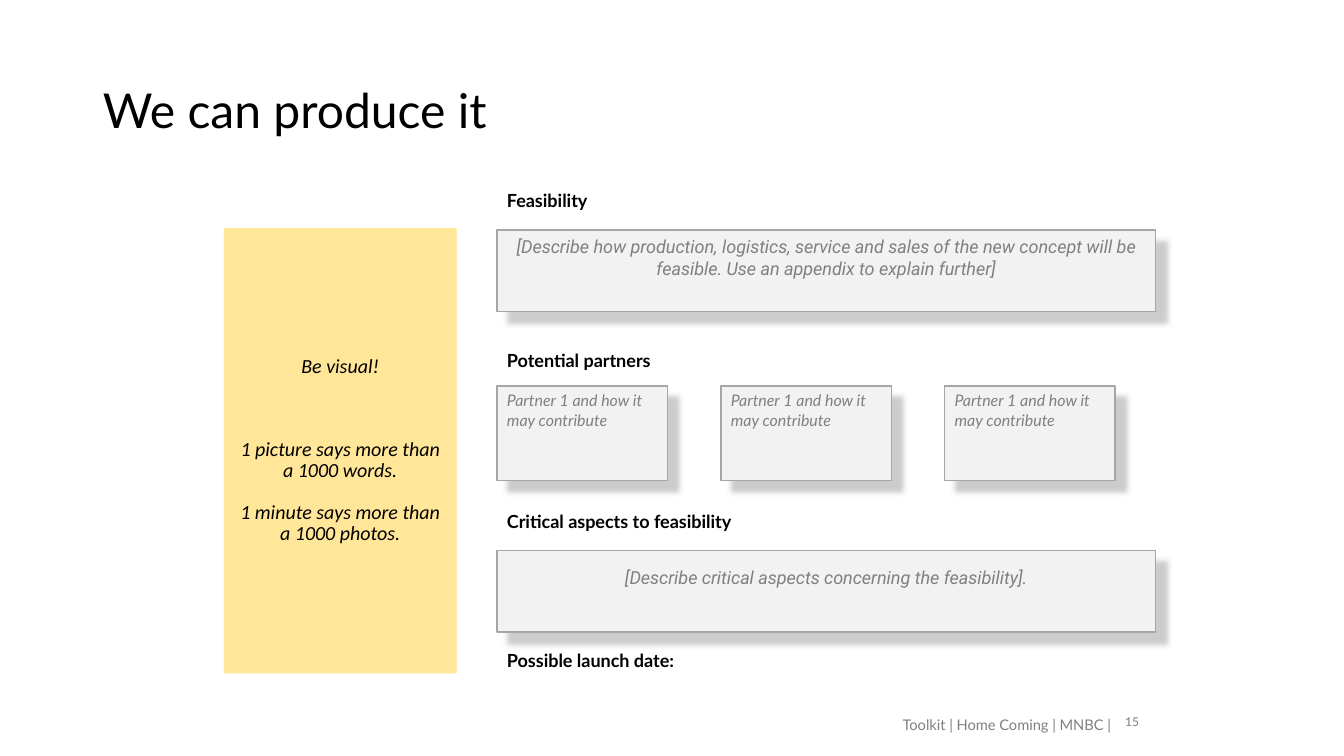
from lxml import etree
from pptx import Presentation
from pptx import util as u
from pptx.dml.color import RGBColor
from pptx.enum import shapes, text
from pptx.oxml import ns

GREY, BLACK = "808080", "000000"
COLUMN_LEFT, COLUMN_WIDTH = 4.93, 6.53
LEFT, CENTER, RIGHT = text.PP_ALIGN.LEFT, text.PP_ALIGN.CENTER, text.PP_ALIGN.RIGHT
TOP, MIDDLE = text.MSO_ANCHOR.TOP, text.MSO_ANCHOR.MIDDLE


def color(value):
    return RGBColor.from_string(value)


def inches(box):
    return [u.Inches(length) for length in box]


def write(shape, *lines, size=12.9, font="Lato", fill=BLACK, bold=False, italic=False,
          align=LEFT, anchor=TOP, spacing=None, gaps=(), bottom=0.05, wrap=True):
    """Write one paragraph per line; gaps are the points between paragraphs."""
    frame = shape.text_frame
    frame.auto_size = text.MSO_AUTO_SIZE.NONE
    frame.word_wrap = wrap
    frame.vertical_anchor = anchor
    frame.margin_bottom = u.Inches(bottom)
    for index, line in enumerate(lines):
        paragraph = frame.add_paragraph() if index else frame.paragraphs[0]
        paragraph.text = line
        paragraph.alignment = align
        if spacing:
            paragraph.line_spacing = spacing
        if index and gaps:
            paragraph.space_before = u.Pt(gaps[index - 1])
        paragraph.font.size = u.Pt(size)
        paragraph.font.name = font
        paragraph.font.bold = bold
        paragraph.font.italic = italic
        paragraph.font.color.rgb = color(fill)


def add_text(slide, box, *lines, **style):
    write(slide.shapes.add_textbox(*inches(box)), *lines, **style)


def add_rectangle(slide, box, fill):
    shape = slide.shapes.add_shape(shapes.MSO_SHAPE.RECTANGLE, *inches(box))
    shape.shadow.inherit = False
    shape.fill.solid()
    shape.fill.fore_color.rgb = color(fill)
    shape.line.fill.background()
    return shape


def add_card(slide, box):
    """Add a light grey rectangle with a soft shadow to the lower right."""
    card = add_rectangle(slide, box, "F2F2F2")
    card.line.color.rgb = color("A6A6A6")
    card.line.width = u.Pt(1)
    effects = card._element.spPr.find(ns.qn("a:effectLst"))
    shadow = etree.SubElement(effects, ns.qn("a:outerShdw"), blurRad=str(u.Pt(4)),
                              dist=str(u.Pt(11)), dir=str(45 * 60000),
                              algn="tl", rotWithShape="0")
    shade = etree.SubElement(shadow, ns.qn("a:srgbClr"), val=GREY)
    etree.SubElement(shade, ns.qn("a:alpha"), val="40000")
    return card


def add_title(slide, box, title):
    placeholder = slide.shapes.title
    placeholder.left, placeholder.top, placeholder.width, placeholder.height = inches(box)
    write(placeholder, title, size=34.3, anchor=MIDDLE, spacing=0.9)


def add_heading(slide, top, heading):
    add_text(slide, (COLUMN_LEFT, top, 4.03, 0.32), heading, bold=True)


def add_description(slide, box, heading, description):
    left, top, width, height = box
    add_heading(slide, top - 0.45, heading)
    card = add_card(slide, (left, top, width, height))
    write(card, description, font="Roboto", fill=GREY, italic=True,
          align=CENTER, anchor=MIDDLE, bottom=0.32)


def add_partners(slide, box, heading, partners):
    left, top, width, height = box
    add_heading(slide, top - 0.41, heading)
    card_width = 1.69
    step = (width - card_width) / (len(partners) - 1)
    for index, partner in enumerate(partners):
        card = add_card(slide, (left + index * step, top, card_width, height))
        write(card, partner, size=11.4, fill=GREY, italic=True)


def add_sidebar(slide, box):
    write(add_rectangle(slide, box, "FFE699"),
          "Be visual!",
          "1 picture says more than a 1000 words.",
          "1 minute says more than a 1000 photos.",
          size=14.3, font="Calibri", italic=True, align=CENTER, anchor=MIDDLE,
          spacing=0.9, gaps=(43.7, 14))


def add_footer(slide, box):
    left, top, width, height = box
    add_text(slide, (left, top + 0.02, 2.35, 0.28), "Toolkit | Home Coming | MNBC |",
             size=10.5, fill=GREY, align=RIGHT, wrap=False)
    add_text(slide, (left + width - 0.34, top, 0.34, height), "15", size=8.6,
             fill="7C7C7C", align=CENTER, anchor=MIDDLE, wrap=False)


def main():
    presentation = Presentation()
    presentation.slide_width, presentation.slide_height = inches((13.33, 7.5))
    slide = presentation.slides.add_slide(presentation.slide_layouts[5])
    add_title(slide, (0.92, 0.4, 11.5, 1.45), "We can produce it")
    add_sidebar(slide, (2.22, 2.26, 2.31, 4.42))
    add_description(slide, (COLUMN_LEFT, 2.28, COLUMN_WIDTH, 0.81), "Feasibility",
                    "[Describe how production, logistics, service and sales of the new "
                    "concept will be feasible. Use an appendix to explain further]")
    add_partners(slide, (COLUMN_LEFT, 3.83, 6.13, 0.94), "Potential partners",
                 ["Partner 1 and how it may contribute"] * 3)
    add_description(slide, (COLUMN_LEFT, 5.46, COLUMN_WIDTH, 0.81),
                    "Critical aspects to feasibility",
                    "[Describe critical aspects concerning the feasibility].")
    add_heading(slide, 6.39, "Possible launch date:")
    add_footer(slide, (8.77, 7.03, 2.63, 0.25))
    presentation.save("out.pptx")


if __name__ == "__main__":
    main()
